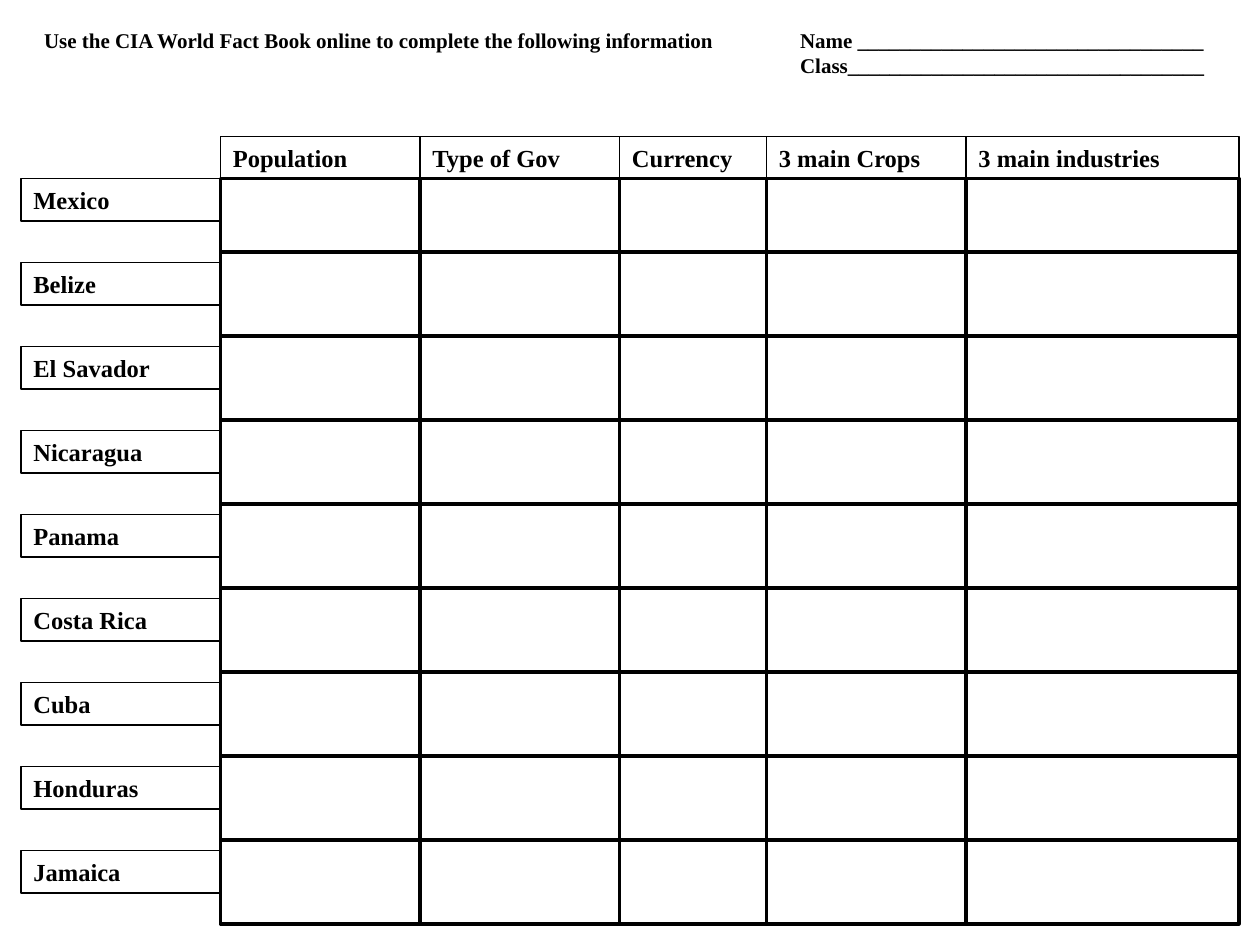
"""Build a country fact worksheet with a labelled grid of empty answer boxes."""
from dataclasses import dataclass
from itertools import accumulate

from lxml.etree import SubElement
from pptx import Presentation
from pptx.dml.color import RGBColor
from pptx.enum.shapes import MSO_SHAPE as Preset
from pptx.enum.text import MSO_ANCHOR as Anchor, MSO_AUTO_SIZE as AutoSize, PP_ALIGN as Align
from pptx.oxml.ns import qn
from pptx.slide import Slide
from pptx.text.text import _Paragraph as Paragraph
from pptx.util import Pt

COLORS = {"ink": "000000"}
FONT = "Times New Roman"

COUNTRIES = ["Mexico", "Belize", "El Savador", "Nicaragua", "Panama",
             "Costa Rica", "Cuba", "Honduras", "Jamaica"]
TOPICS = [("Population", 114), ("Type of Gov", 114), ("Currency", 84),
          ("3 main Crops", 114), ("3 main industries", 156)]
HEADING = [
    "Use the CIA World Fact Book online to complete the following information\tName " + "_" * 33,
    "\tClass" + "_" * 34,
]

LABEL_LEFT, LABEL_WIDTH, LABEL_HEIGHT = 12, 114, 24.3
GRID_LEFT, HEADER_TOP, GRID_TOP = 126, 78, 102
ROW_PITCH, FIRST_ROW_HEIGHT = 48, 42
NAME_TAB = 432


@dataclass
class Box:
    left: float
    top: float
    width: float
    height: float
    border: float
    label: str = ""


def add_text(paragraph: Paragraph, text: str, size: float) -> None:
    """Add one bold run to a left-aligned paragraph."""
    paragraph.alignment = Align.LEFT
    run = paragraph.add_run()
    run.text = text
    run.font.name = FONT
    run.font.size = Pt(size)
    run.font.bold = True
    run.font.color.rgb = RGBColor.from_string(COLORS["ink"])


def add_tab_stop(paragraph: Paragraph, position: float) -> None:
    """Give a paragraph a single left tab stop."""
    properties = paragraph._p.get_or_add_pPr()
    stops = SubElement(properties, qn("a:tabLst"))
    SubElement(stops, qn("a:tab"), pos=str(Pt(position)), algn="l")


def draw_box(slide: Slide, box: Box) -> None:
    """Draw an outlined rectangle with an optional label."""
    rectangle = slide.shapes.add_shape(
        Preset.RECTANGLE, Pt(box.left), Pt(box.top), Pt(box.width), Pt(box.height))
    rectangle.shadow.inherit = False
    rectangle.fill.background()
    rectangle.line.color.rgb = RGBColor.from_string(COLORS["ink"])
    rectangle.line.width = Pt(box.border)
    if box.label:
        frame = rectangle.text_frame
        frame.word_wrap = True
        frame.vertical_anchor = Anchor.TOP
        add_text(frame.paragraphs[0], box.label, 14)


def write_heading(slide: Slide) -> None:
    """Place the instruction and the name and class lines in the title."""
    title = slide.shapes.title
    title.left, title.top, title.width, title.height = Pt(18), Pt(12), Pt(714), Pt(51)
    frame = title.text_frame
    frame.word_wrap = True
    frame.auto_size = AutoSize.NONE
    frame.vertical_anchor = Anchor.TOP
    for index, line in enumerate(HEADING):
        paragraph = frame.add_paragraph() if index else frame.paragraphs[0]
        add_tab_stop(paragraph, NAME_TAB)
        add_text(paragraph, line, 12)


def worksheet_boxes() -> list[Box]:
    """Lay out the country labels, topic headers and answer cells."""
    boxes = [Box(LABEL_LEFT, GRID_TOP + row * ROW_PITCH, LABEL_WIDTH, LABEL_HEIGHT, 0.75, country)
             for row, country in enumerate(COUNTRIES)]
    heights = [FIRST_ROW_HEIGHT] + [ROW_PITCH] * (len(COUNTRIES) - 1)
    tops = list(accumulate(heights[:-1], initial=GRID_TOP))
    lefts = accumulate((width for _, width in TOPICS), initial=GRID_LEFT)
    for left, (topic, width) in zip(lefts, TOPICS):
        boxes.append(Box(left, HEADER_TOP, width, LABEL_HEIGHT, 0.75, topic))
        boxes += [Box(left, top, width, height, 2) for top, height in zip(tops, heights)]
    return boxes


def main() -> None:
    """Build and save the worksheet."""
    deck = Presentation()
    deck.slide_width, deck.slide_height = Pt(720), Pt(540)
    slide = deck.slides.add_slide(deck.slide_layouts.get_by_name("Title Only"))
    write_heading(slide)
    for box in worksheet_boxes():
        draw_box(slide, box)
    deck.save("out.pptx")


if __name__ == "__main__":
    main()
